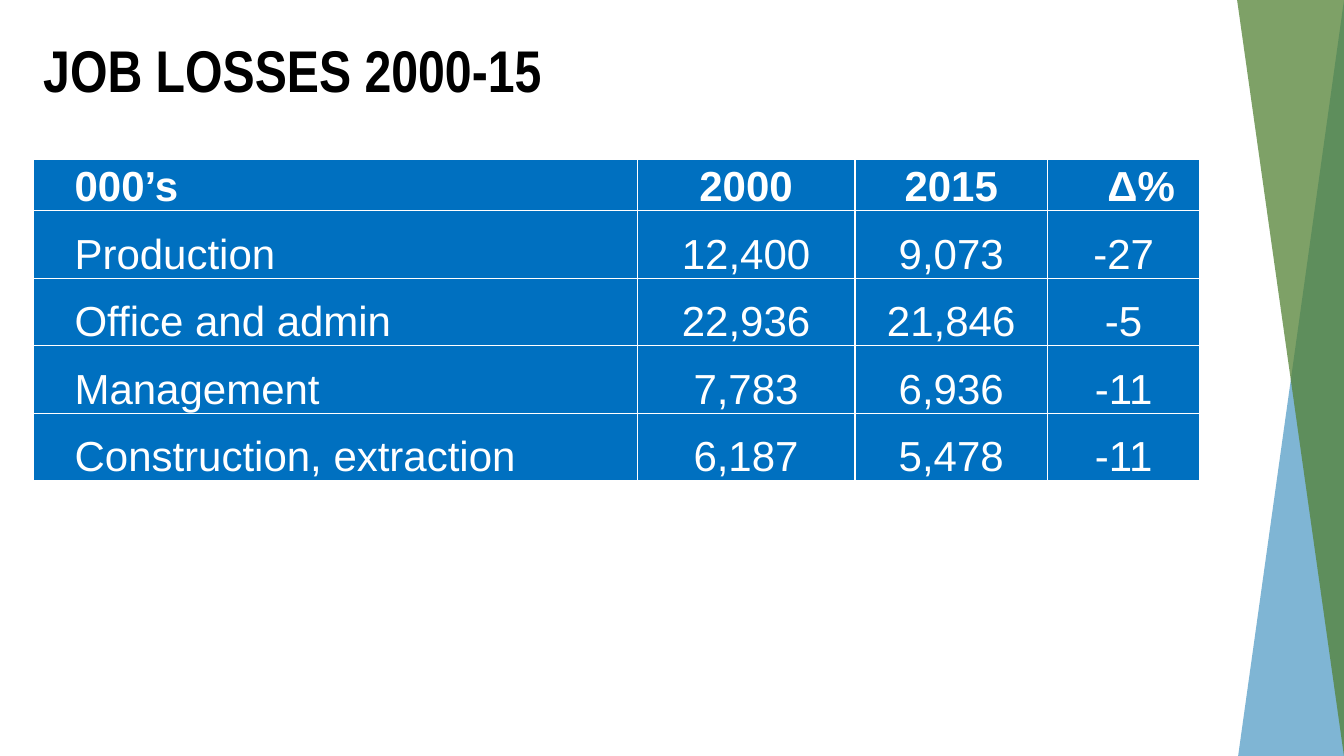
from lxml.etree import SubElement
from pptx import Presentation
from pptx.dml.color import RGBColor
from pptx.enum.text import MSO_ANCHOR as ANCHOR, PP_ALIGN as ALIGN
from pptx.oxml.ns import qn
from pptx.util import Inches, Pt

WHITE = RGBColor(0xFF, 0xFF, 0xFF)
BLACK = RGBColor(0x00, 0x00, 0x00)
TABLE_BLUE = RGBColor(0x00, 0x70, 0xC0)
WEDGE_BLUE = RGBColor(0x00, 0x6C, 0xAB)
WEDGE_GREEN = RGBColor(0x54, 0x82, 0x35)

prs = Presentation()
prs.slide_width, prs.slide_height = Inches(13.33), Inches(7.5)
s = prs.slides.add_slide(prs.slide_layouts[6])

# Translucent wedges on the right edge: blue rising, green falling
wedges = [
    ([(12.28, 7.5), (13.33, 7.5), (13.33, 0)], WEDGE_BLUE, 50),
    ([(12.27, 0), (13.33, 0), (13.33, 7.5)], WEDGE_GREEN, 75),
]
for points, color, opacity in wedges:
    corners = [(Inches(x), Inches(y)) for x, y in points]
    builder = s.shapes.build_freeform(*corners[0])
    builder.add_line_segments(corners[1:], close=True)
    sp = builder.convert_to_shape()
    sp.shadow.inherit = False
    sp.line.fill.background()
    sp.fill.solid()
    sp.fill.fore_color.rgb = color
    srgb = sp._element.spPr.find(".//" + qn("a:srgbClr"))
    SubElement(srgb, qn("a:alpha"), val=str(opacity * 1000))

# Title
sp = s.shapes.add_textbox(Inches(0.33), Inches(0.36), Inches(11.71), Inches(0.78))
tf = sp.text_frame
tf.word_wrap = True
tf.vertical_anchor = ANCHOR.TOP
p = tf.paragraphs[0]
p.text = "JOB LOSSES 2000-15"
p.line_spacing = 0.9
p.font.name, p.font.size, p.font.bold = "Arial Narrow", Pt(42), True
p.font.color.rgb = BLACK

# Job losses table
rows = [
    ("000’s", "2000", "2015", "Δ%"),
    ("Production", "12,400", "9,073", "-27"),
    ("Office and admin", "22,936", "21,846", "-5"),
    ("Management", "7,783", "6,936", "-11"),
    ("Construction, extraction", "6,187", "5,478", "-11"),
]
frame = s.shapes.add_table(len(rows), 4, Inches(0.33), Inches(1.58),
                           Inches(11.57), Inches(3.18))
table = frame.table
for column, width in zip(table.columns, (5.99, 2.16, 1.91, 1.51)):
    column.width = Inches(width)

for i, row in enumerate(rows):
    table.rows[i].height = Inches(0.67 if i else 0.5)
    for j, text in enumerate(row):
        cell = table.cell(i, j)
        cell.vertical_anchor = ANCHOR.BOTTOM
        cell.margin_left = cell.margin_right = cell.margin_top = Inches(0.01)
        cell.margin_bottom = 0
        p = cell.text_frame.paragraphs[0]
        p.text = text
        p.alignment = ALIGN.CENTER if j else ALIGN.LEFT
        # Indent the labels and nudge the change heading to the right
        indent = 0.4 if j == 0 else 0.35 if (i, j) == (0, 3) else 0
        if indent:
            p._p.get_or_add_pPr().set("marL", str(Inches(indent)))
        p.font.name, p.font.size, p.font.bold = "Arial", Pt(30), i == 0
        p.font.color.rgb = WHITE

        # White cell borders
        tcPr = cell._tc.get_or_add_tcPr()
        for side in ("lnL", "lnR", "lnT", "lnB"):
            ln = SubElement(tcPr, qn("a:" + side), w=str(Pt(1)))
            line_fill = SubElement(ln, qn("a:solidFill"))
            SubElement(line_fill, qn("a:srgbClr"), val=str(WHITE))
        cell.fill.solid()
        cell.fill.fore_color.rgb = TABLE_BLUE

prs.save("out.pptx")
